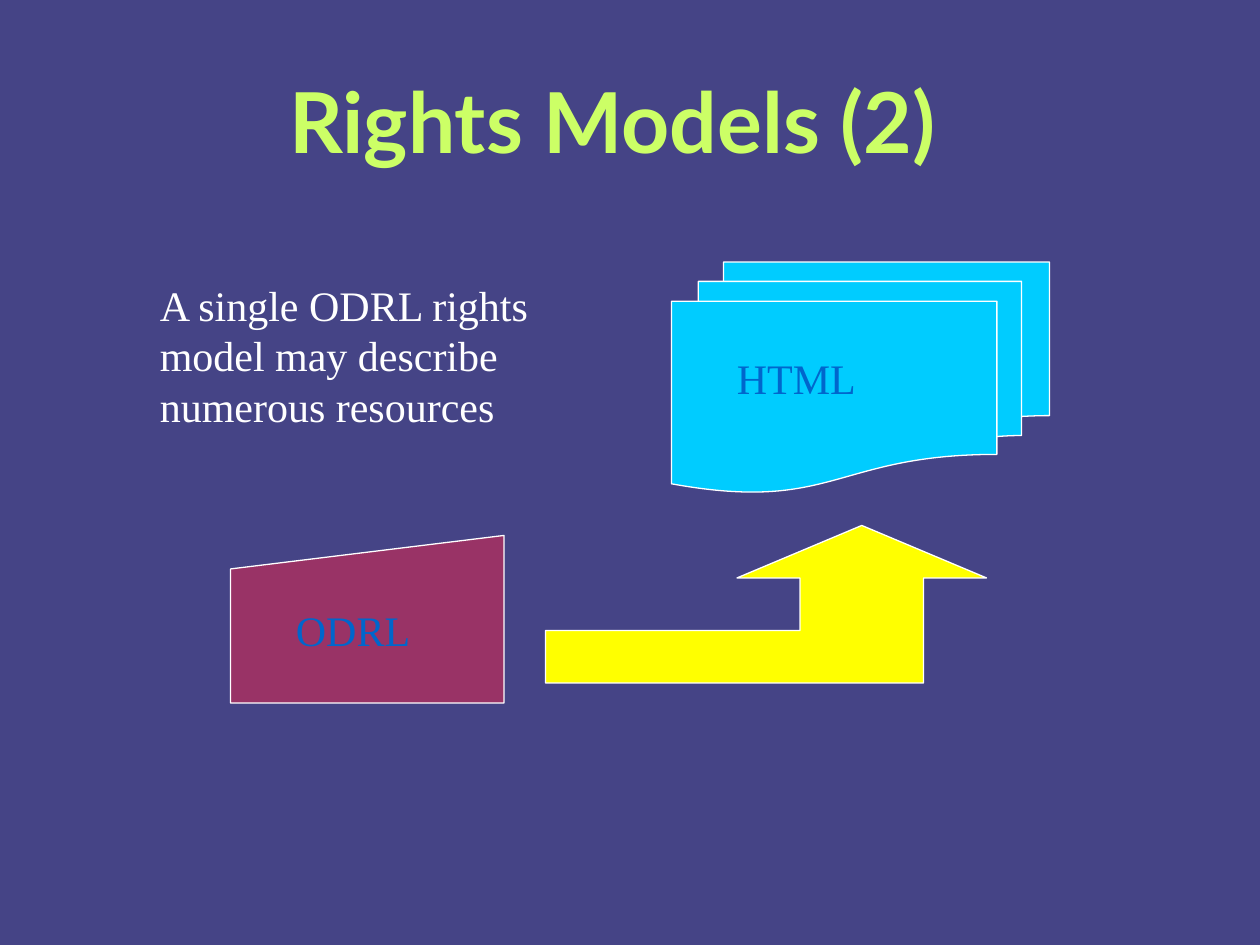
from pptx import Presentation
from pptx.dml.color import RGBColor
from pptx.enum import shapes, text
from pptx.util import Inches, Pt

COLORS = {
    "background": "454486",
    "title": "CCFF66",
    "label": "0066CC",
    "white": "FFFFFF",
    "model": "993366",
    "resources": "00CCFF",
    "arrow": "FFFF00",
}


def color(name):
    """Return the named colour."""
    return RGBColor.from_string(COLORS[name])


def paint(outline, fill):
    """Give a shape a flat fill and a thin white line."""
    outline.shadow.inherit = False
    outline.fill.solid()
    outline.fill.fore_color.rgb = color(fill)
    outline.line.color.rgb = color("white")
    outline.line.width = Pt(0.75)


def add_text(slide, box, words, ink, size=24, font="Times New Roman"):
    """Write one wrapped paragraph in a box and return its frame and run."""
    frame = slide.shapes.add_textbox(*map(Inches, box)).text_frame
    frame.word_wrap = True
    run = frame.paragraphs[0].add_run()
    run.text = words
    run.font.name = font
    run.font.size = Pt(size)
    run.font.color.rgb = color(ink)
    return frame, run


def add_title(slide, box):
    """Place the centred heading."""
    frame, run = add_text(slide, box, "Rights Models (2)", "title", 48, "Lato")
    frame.vertical_anchor = text.MSO_ANCHOR.MIDDLE
    frame.paragraphs[0].alignment = text.PP_ALIGN.CENTER
    run.font.bold = True


def add_node(slide, box, preset, fill, label, label_offset, label_width):
    """Place a flowchart symbol with its label."""
    left, top, _, _ = box
    paint(slide.shapes.add_shape(preset, *map(Inches, box)), fill)
    dx, dy = label_offset
    add_text(slide, (left + dx, top + dy, label_width, 0.5), label, "label")


def add_bent_arrow(slide, box):
    """Draw an arrow that runs right and then turns up."""
    left, top, width, height = box
    right, bottom = left + width, top + height
    head_width, stem_width, bar = 1.98, 0.98, height / 3
    tip = right - head_width / 2
    stem_left, stem_right = tip - stem_width / 2, tip + stem_width / 2
    neck, bar_top = top + bar, bottom - bar
    corners = [
        (right - head_width, neck), (stem_left, neck), (stem_left, bar_top),
        (left, bar_top), (left, bottom), (stem_right, bottom),
        (stem_right, neck), (right, neck),
    ]
    builder = slide.shapes.build_freeform(Inches(tip), Inches(top))
    builder.add_line_segments([(Inches(x), Inches(y)) for x, y in corners], close=True)
    paint(builder.convert_to_shape(), "arrow")


def main():
    """Build the slide and save it."""
    deck = Presentation()
    deck.slide_width, deck.slide_height = Inches(10), Inches(7.5)
    slide = deck.slides.add_slide(deck.slide_layouts[6])
    slide.background.fill.solid()
    slide.background.fill.fore_color.rgb = color("background")

    preset = shapes.MSO_SHAPE
    add_title(slide, (0.61, 0.33, 8.5, 1.25))
    add_node(slide, (1.83, 4.25, 2.17, 1.33), preset.FLOWCHART_MANUAL_INPUT,
             "model", "ODRL", (0.42, 0.5), 1.58)
    add_node(slide, (5.33, 2.08, 3, 1.83), preset.FLOWCHART_MULTIDOCUMENT,
             "resources", "HTML", (0.42, 0.67), 1.5)
    add_bent_arrow(slide, (4.33, 4.17, 3.5, 1.25))
    add_text(slide, (1.17, 2.17, 3.5, 1.3),
             "A single ODRL rights model may describe numerous resources", "white")
    deck.save("out.pptx")


if __name__ == "__main__":
    main()
